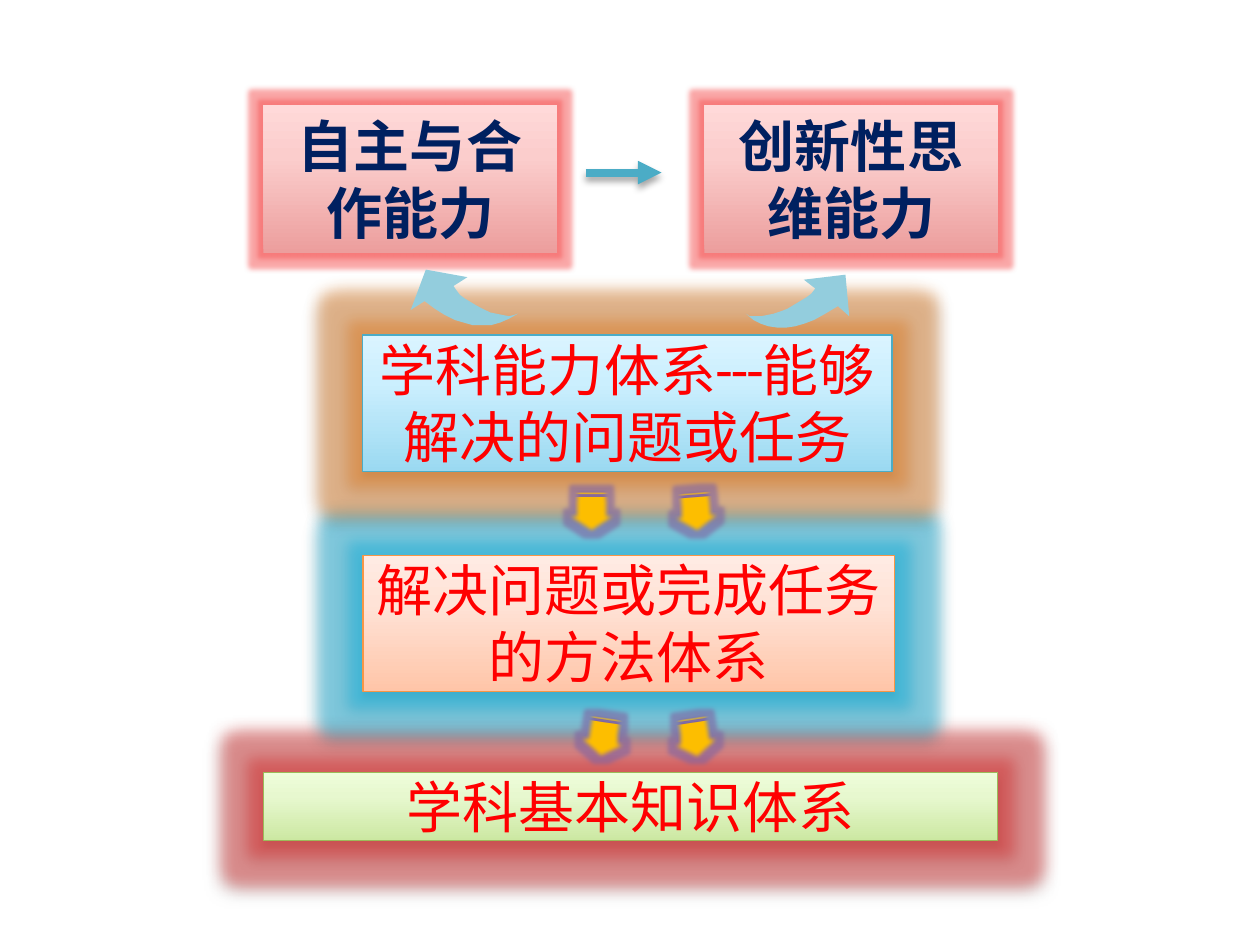
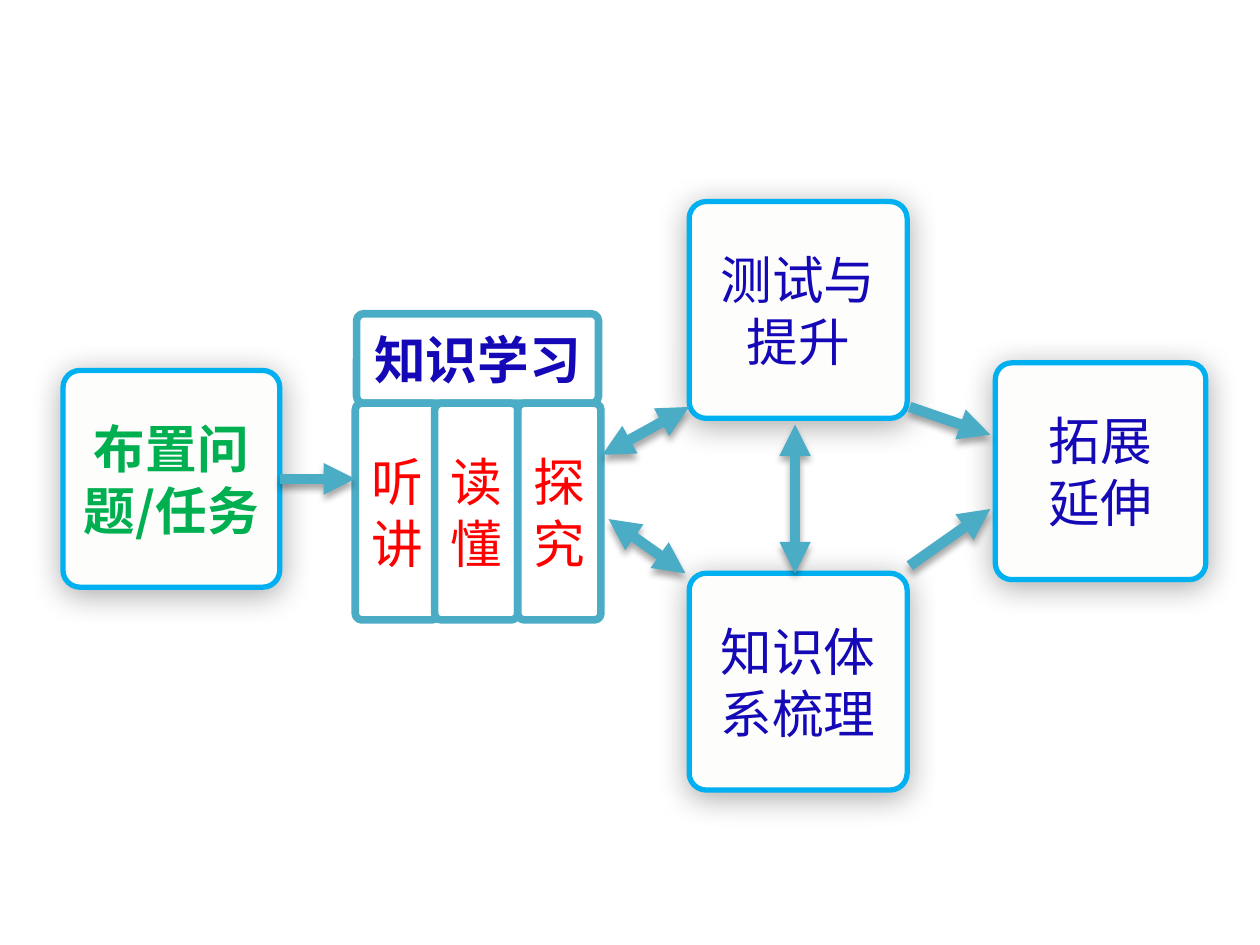
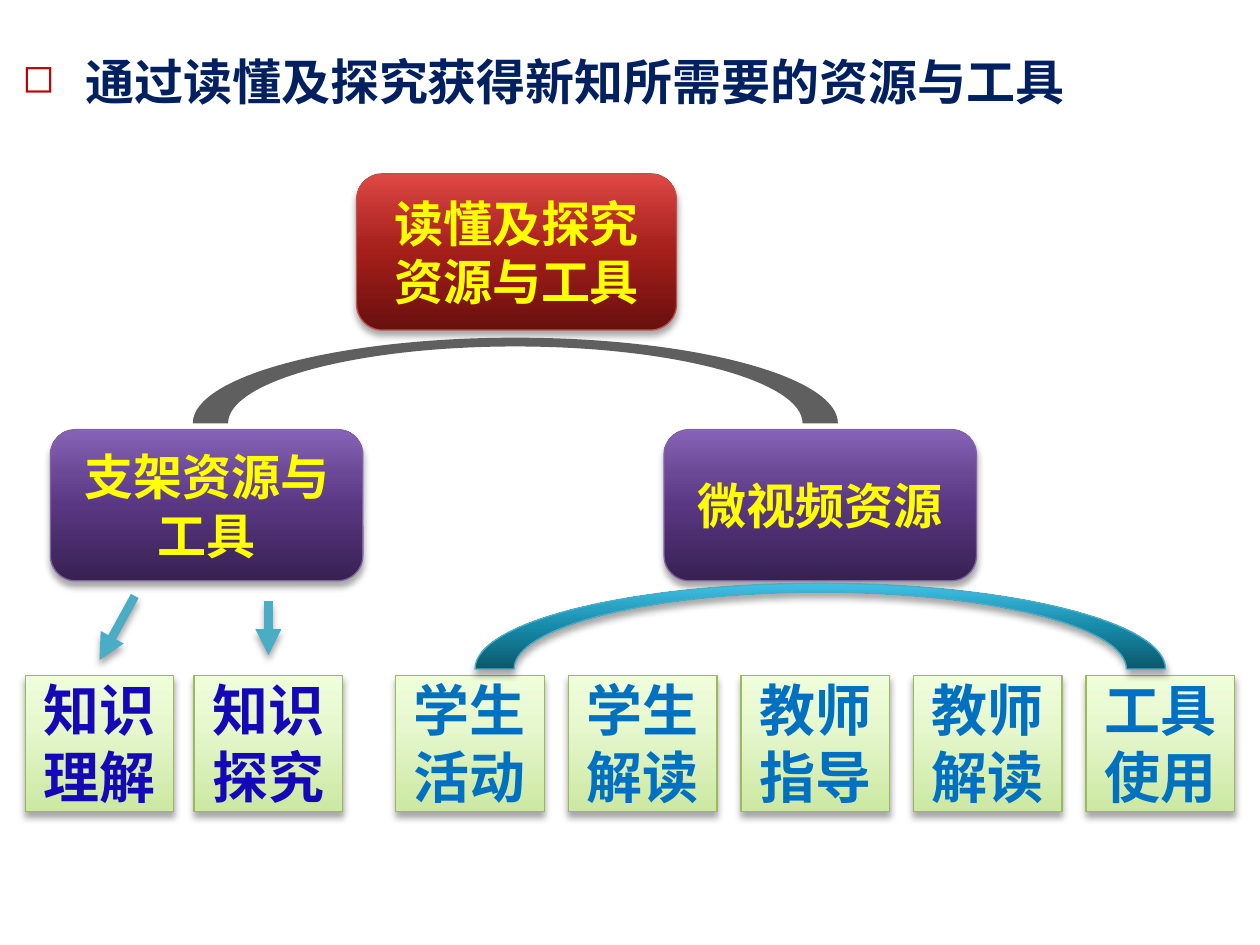
import pptx
import lxml.etree
import pptx.dml.color
import pptx.enum.shapes
import pptx.enum.text
import pptx.oxml.ns
import pptx.util

Inches, Pt = pptx.util.Inches, pptx.util.Pt
KINDS = pptx.enum.shapes.MSO_SHAPE
ANCHOR = pptx.enum.text.MSO_ANCHOR
ALIGN = pptx.enum.text.PP_ALIGN
qn = pptx.oxml.ns.qn

# Shared look
SANS, LATIN = "Noto Sans CJK SC", "Roboto"
RED, NAVY, BLUE, TEAL, YELLOW = "FF0000", "002060", "1509B7", "4BACC6", "FFFF00"
SOFT = ("000000", 35, 4, 3)    # colour, opacity, blur, distance
DEEP = ("000000", 33, 17.8, 3)
GREEN = [(0, "CCE8A2"), (65, "E7F8CF"), (100, "EFFDDB")]
PEACH = [(0, "FFC5A8"), (65, "FFE3D7"), (100, "FFEBE3")]
SKY = [(0, "9BD9F1"), (65, "CBEFFE"), (100, "DAF4FF")]
PINK = [(0, "EC9E9D"), (65, "FBCDCC"), (100, "FFD9D9")]
CRIMSON = [(0, "68100E"), (50, "A41E1A"), (70, "B92E2A"), (100, "DF4845")]
PURPLE = [(0, "372152"), (50, "593782"), (70, "6A4895"), (100, "8763B7")]
OCEAN = [(0, "0B586C"), (50, "178BAA"), (70, "279FC0"), (100, "41C1E6")]

# Slide 1: ability pyramid
LAYERS = [  # box, fill, line, glow, text
    ((2.09, 6.13, 5.83, 0.54), GREEN, "9BBB59", "D93030", "学科基本知识体系"),
    ((2.88, 4.41, 4.22, 1.08), PEACH, "F79646", "14B4E0", "解决问题或完成任务的方法体系"),
    ((2.88, 2.66, 4.2, 1.08), SKY, TEAL, "E4822A", "学科能力体系---能够解决的问题或任务"),
]
GOALS = [(2.09, "自主与合作能力"), (5.59, "创新性思维能力")]
CURVES = [
    [(4.11, 2.49), (4.04, 2.53), (3.97, 2.56), (3.9, 2.58), (3.82, 2.58), (3.75, 2.58),
     (3.68, 2.56), (3.61, 2.54), (3.53, 2.5), (3.45, 2.45), (3.37, 2.39), (3.26, 2.46),
     (3.38, 2.14), (3.71, 2.2), (3.6, 2.27), (3.62, 2.3), (3.65, 2.34), (3.69, 2.37),
     (3.74, 2.4), (3.79, 2.43), (3.83, 2.45), (3.89, 2.48), (3.94, 2.49), (3.99, 2.5),
     (4.04, 2.51), (4.08, 2.5)],
    [(5.92, 2.49), (5.98, 2.54), (6.04, 2.57), (6.1, 2.59), (6.17, 2.6), (6.24, 2.6),
     (6.31, 2.59), (6.38, 2.57), (6.46, 2.54), (6.55, 2.49), (6.65, 2.43), (6.74, 2.51),
     (6.71, 2.18), (6.38, 2.22), (6.47, 2.29), (6.44, 2.33), (6.4, 2.36), (6.35, 2.39),
     (6.3, 2.42), (6.25, 2.45), (6.2, 2.47), (6.14, 2.49), (6.09, 2.5), (6.04, 2.51),
     (5.99, 2.51), (5.95, 2.51)],
]
DROPS = [(4.51, 3.79, 90), (5.34, 3.79, 85.4), (5.33, 5.58, 81.6), (4.6, 5.58, 98.4)]

# Slide 2: learning flow
STEPS = [  # box, paragraphs, colour, bold
    ((0.5, 2.94, 1.72, 1.72), "布置问题/任务", "00B050", True),
    ((5.47, 1.6, 1.73, 1.72), "测试与提升", BLUE, False),
    ((5.47, 4.55, 1.73, 1.72), "知识体系梳理", BLUE, False),
    ((7.9, 2.88, 1.67, 1.72), "拓展\n延伸", BLUE, False),
]
STUDY = [
    ((2.83, 2.49, 1.92, 0.71), "知识学习", BLUE, True),
    ((2.82, 3.2, 0.66, 1.72), "听讲", RED, False),
    ((3.45, 3.2, 0.66, 1.72), "读懂", RED, False),
    ((4.11, 3.2, 0.66, 1.72), "探究", RED, False),
]
FLOWS = [  # from, to, arrowhead at both ends
    ((4.78, 3.61), (5.47, 3.23), True),
    ((4.83, 4.12), (5.44, 4.55), True),
    ((7.22, 4.49), (7.86, 4.04), False),
    ((7.22, 3.23), (7.86, 3.45), False),
    ((6.31, 3.37), (6.31, 4.55), True),
]

# Slide 3: resource tree
TITLE = "通过读懂及探究获得新知所需要的资源与工具"
NODES = [
    ((2.83, 1.38, 2.54, 1.24), CRIMSON, "C0504D", "读懂及探究资源与工具"),
    ((0.4, 3.41, 2.48, 1.2), PURPLE, "8064A2", "支架资源与工具"),
    ((5.27, 3.41, 2.48, 1.2), PURPLE, "8064A2", "微视频资源"),
]
LEAVES = [  # left, step, colour, texts
    (0.2, 1.34, BLUE, ["知识理解", "知识探究"]),
    (3.14, 1.37, "0070C0", ["学生活动", "学生解读", "教师指导", "教师解读", "工具使用"]),
]
TWIGS = [((1.07, 4.73), (0.79, 5.24)), ((2.13, 4.77), (2.13, 5.2))]


def rgb(code):
    return pptx.dml.color.RGBColor.from_string(code)


def node(host, tag, **attrs):
    child = lxml.etree.SubElement(host, qn("a:" + tag))
    for key, val in attrs.items():
        child.set(key, str(val))
    return child


def tint(host, code, alpha):
    node(node(host, "srgbClr", val=code), "alpha", val=alpha * 1000)


def effects(host, shadow=None, glow=None, fade=None):
    """Fill an effect list with a glow (colour, size, opacity), a shadow and a soft edge."""
    if glow:
        code, size, alpha = glow
        tint(node(host, "glow", rad=Pt(size)), code, alpha)
    if shadow:
        code, alpha, blur, dist = shadow
        tint(node(host, "outerShdw", blurRad=Pt(blur), dist=Pt(dist), dir=5400000,
                  algn="ctr", rotWithShape=0), code, alpha)
    if fade:
        node(host, "softEdge", rad=Pt(fade))


def style(shape, fill, line=None, width=0.75, **glints):
    if isinstance(fill, str):
        shape.fill.solid()
        shape.fill.fore_color.rgb = rgb(fill)
    else:
        shape.fill.gradient()
        shape.fill.gradient_angle = 90
        stops = shape._element.spPr.find(".//" + qn("a:gsLst"))
        for old in list(stops):
            stops.remove(old)
        for pos, code in fill:
            node(node(stops, "gs", pos=pos * 1000), "srgbClr", val=code)
    if line:
        shape.line.color.rgb = rgb(line)
        shape.line.width = Pt(width)
    else:
        shape.line.fill.background()
    shape.shadow.inherit = False
    effects(shape._element.spPr.find(qn("a:effectLst")), **glints)


def write(shape, text, size, color, bold=False, font=SANS, tight=False, align=ALIGN.CENTER):
    frame = shape.text_frame
    frame.word_wrap = True
    frame.vertical_anchor = ANCHOR.TOP if tight else ANCHOR.MIDDLE
    if tight:
        frame.margin_left = frame.margin_right = frame.margin_top = frame.margin_bottom = 0
    for i, part in enumerate(text.split("\n")):
        para = frame.add_paragraph() if i else frame.paragraphs[0]
        para.alignment = align
        run = para.add_run()
        run.text = part
        run.font.size, run.font.bold, run.font.name = Pt(size), bold, font
        run.font.color.rgb = rgb(color)
        node(run._r.rPr, "ea", typeface=SANS)


def block(slide, kind, box, fill, **look):
    shape = slide.shapes.add_shape(kind, *map(Inches, box))
    style(shape, fill, **look)
    return shape


def outline(slide, points, fill, **look):
    spots = [(Inches(x), Inches(y)) for x, y in points]
    pen = slide.shapes.build_freeform(*spots[0], scale=1.0)
    pen.add_line_segments(spots[1:], close=True)
    shape = pen.convert_to_shape()
    style(shape, fill, **look)
    return shape


def bend(edge, start, rising):
    """Turn a straight edge into a quarter of an ellipse; return its end."""
    (x0, y0), point = start, edge[0]
    x1, y1 = int(point.get("x")), int(point.get("y"))
    k = 0.55
    if rising:
        knots = [(x0, y0 + k * (y1 - y0)), (x1 - k * (x1 - x0), y1)]
    else:
        knots = [(x0 + k * (x1 - x0), y0), (x1, y1 - k * (y1 - y0))]
    edge.remove(point)
    curve = lxml.etree.Element(qn("a:cubicBezTo"))
    for x, y in knots + [(x1, y1)]:
        node(curve, "pt", x=round(x), y=round(y))
    edge.getparent().replace(edge, curve)
    return x1, y1


def arch(slide, mid, base, outer, inner, fill, **look):
    """Draw a half ring; outer and inner are its horizontal radii."""
    points = [(mid - inner, base), (mid, base - 0.61), (mid + inner, base),
              (mid + outer, base), (mid, base - 0.68), (mid - outer, base)]
    shape = outline(slide, points, fill, **look)
    edges = list(shape._element.spPr.iter(qn("a:lnTo")))
    corner = next(shape._element.spPr.iter(qn("a:moveTo")))[0]
    start = int(corner.get("x")), int(corner.get("y"))
    far = int(edges[2][0].get("x")), int(edges[2][0].get("y"))
    for first, begin in ((0, start), (3, far)):
        top = bend(edges[first], begin, True)
        bend(edges[first + 1], top, False)


def arrow(slide, start, end, width, both=False, first=None):
    line = slide.shapes.add_connector(pptx.enum.shapes.MSO_CONNECTOR.STRAIGHT,
                                      *map(Inches, start + end))
    if first:
        line.begin_connect(*first)
    line.line.color.rgb = rgb(TEAL)
    line.line.width = Pt(width)
    stroke = line._element.spPr.find(qn("a:ln"))
    if both:
        node(stroke, "headEnd", type="triangle")
    node(stroke, "tailEnd", type="triangle")
    effects(node(line._element.spPr, "effectLst"), SOFT)


def pyramid(slide):
    for box, fill, line, glow, text in LAYERS:
        shape = block(slide, KINDS.RECTANGLE, box, fill, line=line, shadow=SOFT,
                      glow=(glow, 17, 45))
        write(shape, text, 32, RED, font=LATIN, tight=True)
    for left, text in GOALS:
        shape = block(slide, KINDS.RECTANGLE, (left, 0.83, 2.33, 1.18), PINK,
                      glow=("F55050", 6, 50))
        write(shape, text, 32, NAVY, True, LATIN)
    for points in CURVES:
        outline(slide, points, "93CDDD")
    for left, top, turn in DROPS:
        drop = block(slide, KINDS.STRIPED_RIGHT_ARROW, (left, top, 0.37, 0.56), "FFC000",
                     line="8064A2", glow=("8064A2", 5, 60), fade=2.5)
        drop.rotation = turn
    arrow(slide, (4.65, 1.37), (5.25, 1.37), 4.5)


def flow(slide):
    cards = []
    looks = [(STEPS, "FDFDFC", dict(line="00B0F0", width=3, shadow=DEEP)),
             (STUDY, "FFFFFF", dict(line=TEAL, width=4.33))]
    for group, fill, look in looks:
        for box, text, color, bold in group:
            card = block(slide, KINDS.ROUNDED_RECTANGLE, box, fill, **look)
            card.adjustments[0] = 0.078
            write(card, text, 29.5, color, bold)
            cards.append(card)
    arrow(slide, (2.22, 3.8), (2.82, 3.8), 6, first=(cards[0], 3))
    for start, end, both in FLOWS:
        arrow(slide, start, end, 6, both)


def tree(slide):
    # Heading with a square bullet
    head = slide.shapes.add_textbox(*map(Inches, (0.08, 0.13, 9.49, 0.81)))
    write(head, TITLE, 28, NAVY, True, align=ALIGN.LEFT)
    head.text_frame.vertical_anchor = ANCHOR.TOP
    para = head.text_frame.paragraphs[0]
    para.line_spacing = 1.5
    props = para._p.get_or_add_pPr()
    props.set("marL", str(Inches(0.5)))
    props.set("indent", str(Inches(-0.5)))
    node(node(props, "buClr"), "srgbClr", val="C00000")
    node(props, "buSzPct", val=80000)
    node(props, "buChar", char="◻")
    # Branches and leaves
    for box, fill, line, text in NODES:
        shape = block(slide, KINDS.ROUNDED_RECTANGLE, box, fill, line=line, shadow=SOFT)
        write(shape, text, 28, YELLOW, True)
    arch(slide, 4.09, 3.36, 2.56, 2.28, "5F5F5F")
    for left, step, color, texts in LEAVES:
        for i, text in enumerate(texts):
            leaf = block(slide, KINDS.RECTANGLE, (left + i * step, 5.36, 1.18, 1.08), GREEN,
                         line="9BBB59", shadow=SOFT)
            write(leaf, text, 32, color, True, tight=True)
    for start, end in TWIGS:
        arrow(slide, start, end, 5)
    arch(slide, 6.51, 5.31, 2.74, 2.43, OCEAN, line=TEAL, shadow=SOFT)


def main():
    deck = pptx.Presentation()
    deck.slide_width, deck.slide_height = Inches(10), Inches(7.5)
    for build in (pyramid, flow, tree):
        build(deck.slides.add_slide(deck.slide_layouts[6]))
    deck.save("out.pptx")


if __name__ == "__main__":
    main()
